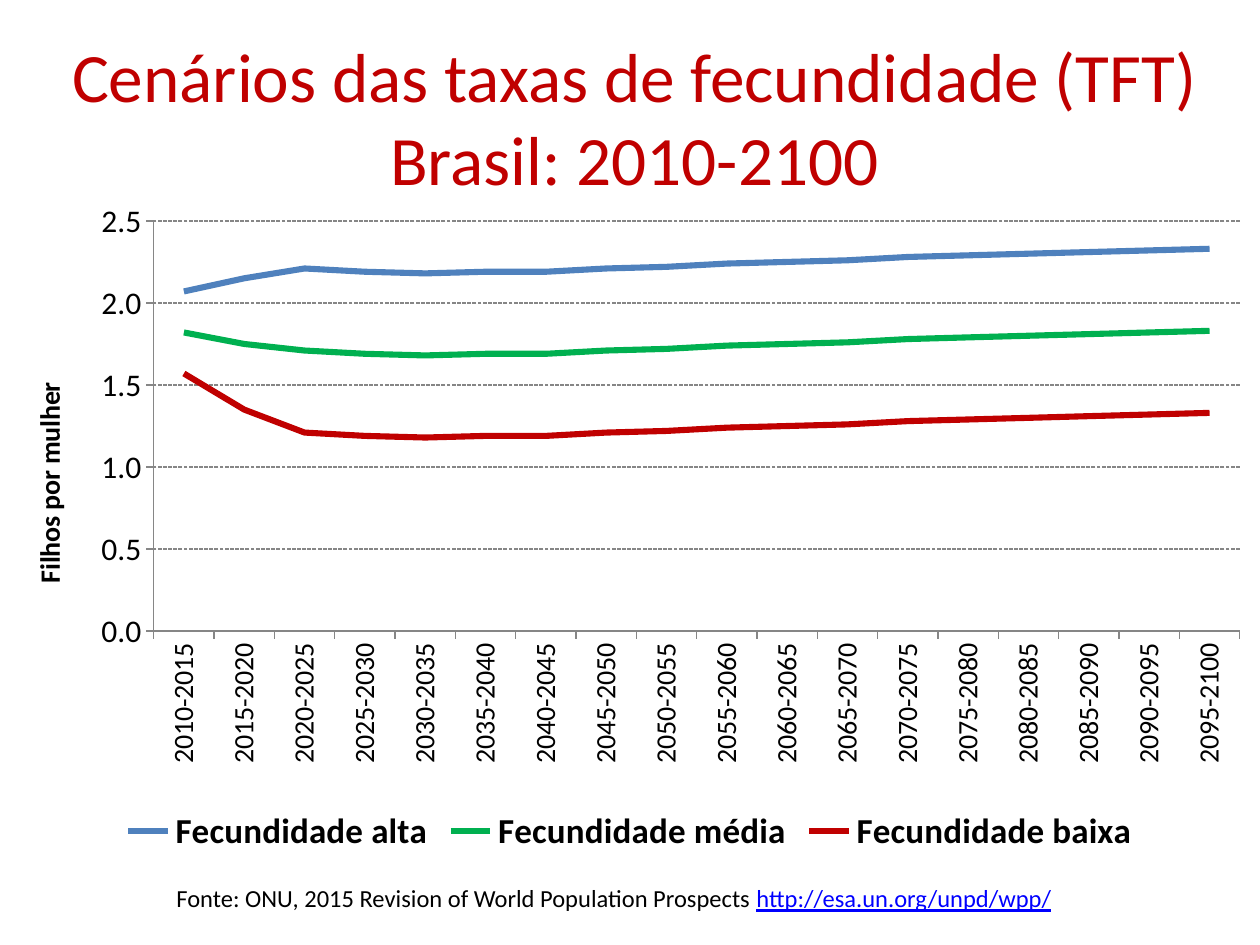
from lxml import etree
from pptx import Presentation
from pptx.chart.data import CategoryChartData
from pptx.dml.color import RGBColor
from pptx.enum.chart import XL_CHART_TYPE, XL_LEGEND_POSITION, XL_MARKER_STYLE, XL_TICK_MARK
from pptx.enum.dml import MSO_LINE
from pptx.enum.text import MSO_ANCHOR, PP_ALIGN
from pptx.oxml.ns import qn
from pptx.util import Pt

LINE = XL_CHART_TYPE.LINE
BOTTOM = XL_LEGEND_POSITION.BOTTOM
NO_MARKER = XL_MARKER_STYLE.NONE
OUTSIDE = XL_TICK_MARK.OUTSIDE
DASH = MSO_LINE.SQUARE_DOT
PX = 914400 / 126


def px(*lengths):
    return [round(n * PX) for n in lengths]


def style(font, size, color="000000", bold=False):
    font.name, font.size, font.bold = "Calibri", Pt(size), bold
    font.color.rgb = RGBColor.from_string(color)


prs = Presentation()
prs.slide_width, prs.slide_height = px(1260, 945)
s = prs.slides.add_slide(prs.slide_layouts[5])

# Title
title = s.shapes.title
title.left, title.top, title.width, title.height = px(44, 38, 1181, 157)
tf = title.text_frame
tf.word_wrap = True
tf.vertical_anchor = MSO_ANCHOR.MIDDLE
p = tf.paragraphs[0]
p.text = "Cenários das taxas de fecundidade (TFT)\vBrasil: 2010-2100"
p.alignment = PP_ALIGN.CENTER
style(p.font, 39.6, "C00000")

# Chart data: the three scenarios by five-year period
series = [
    ("Fecundidade alta", "4F81BD",
     [2.07, 2.15, 2.21, 2.19, 2.18, 2.19, 2.19, 2.21, 2.22,
      2.24, 2.25, 2.26, 2.28, 2.29, 2.3, 2.31, 2.32, 2.33]),
    ("Fecundidade média", "00B050",
     [1.82, 1.75, 1.71, 1.69, 1.68, 1.69, 1.69, 1.71, 1.72,
      1.74, 1.75, 1.76, 1.78, 1.79, 1.8, 1.81, 1.82, 1.83]),
    ("Fecundidade baixa", "C00000",
     [1.57, 1.35, 1.21, 1.19, 1.18, 1.19, 1.19, 1.21, 1.22,
      1.24, 1.25, 1.26, 1.28, 1.29, 1.3, 1.31, 1.32, 1.33]),
]
data = CategoryChartData()
data.categories = [f"{year}-{year + 5}" for year in range(2010, 2100, 5)]
for name, _, values in series:
    data.add_series(name, values)

# Line chart
chart = s.shapes.add_chart(LINE, *px(0, 195, 1260, 665), data).chart
style(chart.font, 16)
chart.has_title = False
chart.has_legend = True
chart.legend.position = BOTTOM
chart.legend.include_in_layout = False
style(chart.legend.font, 20, bold=True)
chart.plots[0].vary_by_categories = False
for line, (_, color, _) in zip(chart.plots[0].series, series):
    line.smooth = False
    line.marker.style = NO_MARKER
    line.format.line.width = Pt(3.5)
    line.format.line.color.rgb = RGBColor.from_string(color)

# Axes
cat, val = chart.category_axis, chart.value_axis
for axis, size in ((cat, 16), (val, 18)):
    axis.major_tick_mark = OUTSIDE
    style(axis.tick_labels.font, size)
    axis.format.line.color.rgb = RGBColor.from_string("868686")
cat.tick_labels.font._element.getparent().getparent().getparent().find(
    qn("a:bodyPr")).set("rot", "-5400000")
val.minimum_scale, val.maximum_scale, val.major_unit = 0, 2.5, 0.5
val.tick_labels.number_format = "#,##0.0"
val.tick_labels.number_format_is_linked = False
grid = val.major_gridlines.format.line
grid.color.rgb = RGBColor.from_string("868686")
grid.width = Pt(0.75)
grid.dash_style = DASH
p = val.axis_title.text_frame.paragraphs[0]
p.text = "Filhos por mulher"
style(p.font, 16, bold=True)

# Fixed inner plot area
area = chart._chartSpace.chart.plotArea
for old in area.findall(qn("c:layout")):
    area.remove(old)
layout = etree.Element(qn("c:layout"))
manual = etree.SubElement(layout, qn("c:manualLayout"))
for tag, value in (("layoutTarget", "inner"), ("xMode", "edge"), ("yMode", "edge"),
                   ("x", "0.122"), ("y", "0.039"), ("w", "0.862"), ("h", "0.617")):
    etree.SubElement(manual, qn(f"c:{tag}")).set("val", value)
area.insert(0, layout)

# Source note
tf = s.shapes.add_textbox(*px(164, 877, 1002, 43)).text_frame
tf.word_wrap = True
p = tf.paragraphs[0]
style(p.font, 14)
p.add_run().text = "Fonte: ONU, 2015 Revision of World Population Prospects "
r = p.add_run()
r.text = "http://esa.un.org/unpd/wpp/"
r.font.underline = True
r.font.color.rgb = RGBColor.from_string("0000FF")

prs.save("out.pptx")
